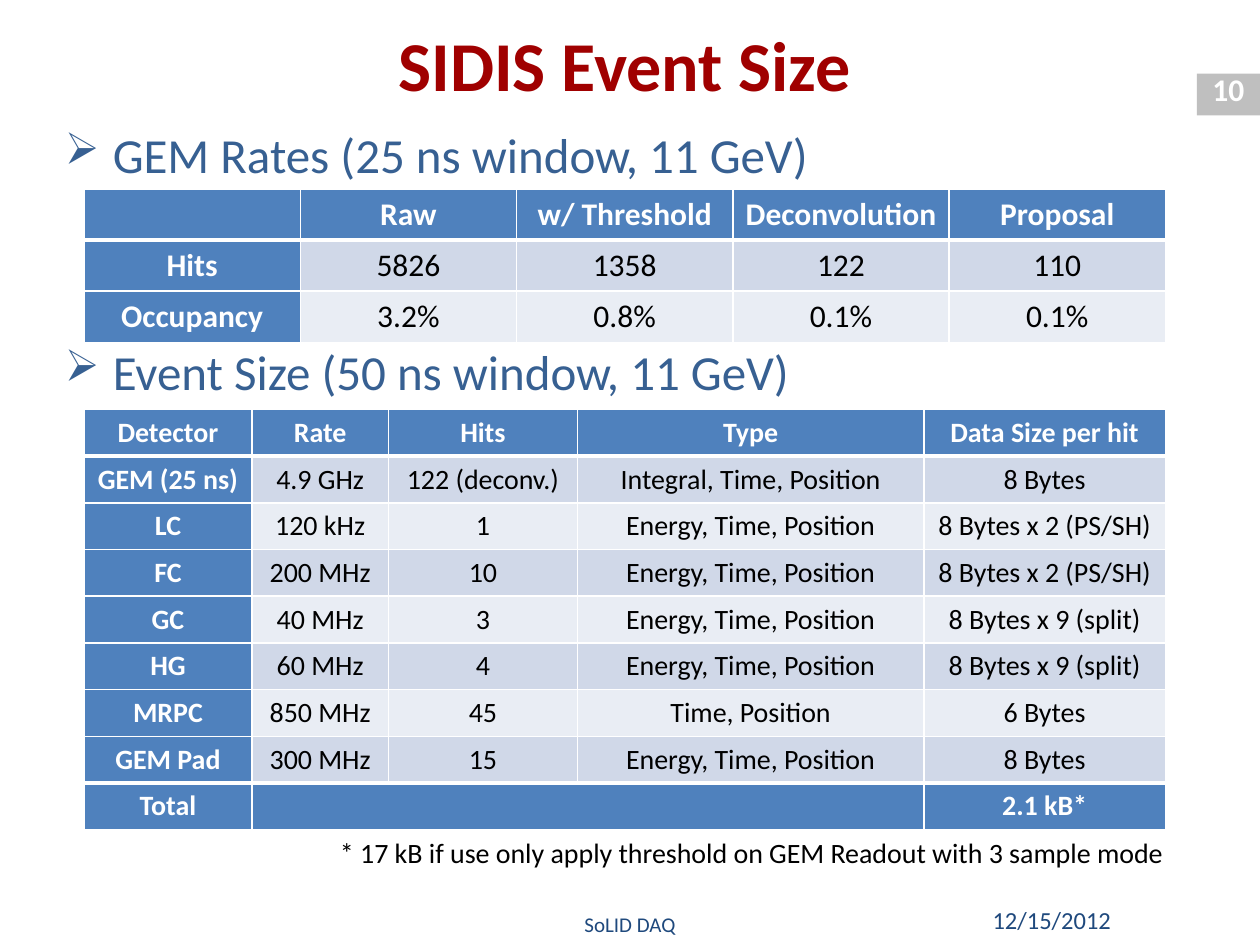
from lxml.etree import SubElement
from pptx import Presentation
from pptx.dml.color import RGBColor
from pptx.enum.shapes import MSO_SHAPE
from pptx.enum.text import MSO_ANCHOR, PP_ALIGN
from pptx.oxml.ns import qn
from pptx.util import Inches, Pt

COLUMNS, ROWS = 120, 90
WHITE, BLACK, NAVY, HEADING = "FFFFFF", "000000", "1F497D", "376092"
HEADER, BANDS = "4F81BD", ("D0D8E8", "E9EDF4")

GEM_RATES = [
    ["", "Raw", "w/ Threshold", "Deconvolution", "Proposal"],
    ["Hits", "5826", "1358", "122", "110"],
    ["Occupancy", "3.2%", "0.8%", "0.1%", "0.1%"],
]
ENERGY = "Energy, Time, Position"
EVENT_SIZE = [
    ["Detector", "Rate", "Hits", "Type", "Data Size per hit"],
    ["GEM (25 ns)", "4.9 GHz", "122 (deconv.)", "Integral, Time, Position", "8 Bytes"],
    ["LC", "120 kHz", "1", ENERGY, "8 Bytes x 2 (PS/SH)"],
    ["FC", "200 MHz", "10", ENERGY, "8 Bytes x 2 (PS/SH)"],
    ["GC", "40 MHz", "3", ENERGY, "8 Bytes x 9 (split)"],
    ["HG", "60 MHz", "4", ENERGY, "8 Bytes x 9 (split)"],
    ["MRPC", "850 MHz", "45", "Time, Position", "6 Bytes"],
    ["GEM Pad", "300 MHz", "15", ENERGY, "8 Bytes"],
    ["Total", "", "", "", "2.1 kB*"],
]


def color(value):
    return RGBColor.from_string(value)


class SlideBuilder:
    """Places elements on a grid of 120 columns by 90 rows."""

    font = "Calibri"

    def __init__(self, deck):
        self.page = deck.slides.add_slide(deck.slide_layouts[6])
        self.unit_x = deck.slide_width / COLUMNS
        self.unit_y = deck.slide_height / ROWS

    def place(self, left, top, width, height):
        return (round(left * self.unit_x), round(top * self.unit_y),
                round(width * self.unit_x), round(height * self.unit_y))

    def span(self, para, text, size, tint, bold=False):
        span = para.add_run()
        span.text = text
        span.font.name, span.font.size, span.font.bold = self.font, Pt(size), bold
        span.font.color.rgb = color(tint)

    def rectangle(self, area, tint):
        box = self.page.shapes.add_shape(MSO_SHAPE.RECTANGLE, *self.place(*area))
        box.shadow.inherit = False
        box.fill.solid()
        box.fill.fore_color.rgb = color(tint)
        box.line.fill.background()

    def frame(self, area, anchor, wrap=True):
        box = self.page.shapes.add_textbox(*self.place(*area))
        frame = box.text_frame
        frame.word_wrap, frame.vertical_anchor = wrap, anchor
        return frame

    def text(self, area, text, size, tint, align=PP_ALIGN.CENTER, bold=False,
             anchor=MSO_ANCHOR.MIDDLE, wrap=True):
        para = self.frame(area, anchor, wrap).paragraphs[0]
        para.alignment = align
        self.span(para, text, size, tint, bold)

    def bullets(self, area, lines, gap):
        frame = self.frame(area, MSO_ANCHOR.TOP)
        for index, line in enumerate(lines):
            para = frame.add_paragraph() if index else frame.paragraphs[0]
            if index:
                para.space_before = Pt(gap)
            properties = para._p.get_or_add_pPr()
            properties.set("marL", str(Inches(0.38)))
            properties.set("indent", str(Inches(-0.38)))
            SubElement(properties, qn("a:buSzPct"), val="90000")
            SubElement(properties, qn("a:buChar"), char="➢")
            self.span(para, line, 28, HEADING)

    def borders(self, cell, top, bottom):
        """Draw white cell edges; top and bottom are widths in points."""
        properties = cell._tc.get_or_add_tcPr()
        for side, width in zip("LRTB", (1, 1, top, bottom)):
            line = SubElement(properties, qn(f"a:ln{side}"), w=str(Pt(width)))
            fill = SubElement(line, qn("a:solidFill"))
            SubElement(fill, qn("a:srgbClr"), val=WHITE)

    def table(self, left, top, widths, row_height, data, size,
              anchor=MSO_ANCHOR.TOP, total=False):
        """Header row and column, banded body and, if total, a closing total row."""
        area = self.place(left, top, sum(widths), row_height * len(data))
        table = self.page.shapes.add_table(len(data), len(widths), *area).table
        for column, width in zip(table.columns, widths):
            column.width = round(width * self.unit_x)
        last = len(data) - 1 if total else None
        for r, values in enumerate(data):
            table.rows[r].height = round(row_height * self.unit_y)
            for c, value in enumerate(values):
                cell = table.cell(r, c)
                strong = c == 0 or r in (0, last)
                self.borders(cell, 3 if r in (1, last) else 1,
                             3 if r == 0 or r + 1 == last else 1)
                cell.fill.solid()
                cell.fill.fore_color.rgb = color(HEADER if strong else BANDS[(r - 1) % 2])
                cell.vertical_anchor = anchor
                para = cell.text_frame.paragraphs[0]
                para.alignment = PP_ALIGN.CENTER
                if value:
                    self.span(para, value, size, WHITE if strong else BLACK, strong)
                else:
                    SubElement(para._p, qn("a:endParaRPr"), sz=str(size * 100))
        if total:
            table.cell(last, 1).merge(table.cell(last, len(widths) - 2))


def main():
    deck = Presentation()
    deck.slide_width, deck.slide_height = Inches(10), Inches(7.5)
    slide = SlideBuilder(deck)

    slide.rectangle((114, 7, 6, 4), "BFBFBF")
    slide.text((114, 6.1, 6, 4.8), "10", 18, WHITE, bold=True, anchor=MSO_ANCHOR.TOP)
    slide.text((5, 1, 109, 10), "SIDIS Event Size", 40, "A00000", bold=True)
    slide.bullets((5, 11.3, 110, 73), ["GEM Rates (25 ns window, 11 GeV)",
                                       "Event Size (50 ns window, 11 GeV)"], gap=90)
    slide.text((91, 85.2, 16, 4.8), "12/15/2012", 14, NAVY, PP_ALIGN.RIGHT)
    slide.text((29, 86, 62, 4), "SoLID DAQ", 12, NAVY)
    slide.table(8, 18, [103 / 5] * 5, 4.87, GEM_RATES, 18, MSO_ANCHOR.MIDDLE)
    slide.table(8, 39, [16, 13, 18, 33, 23], 4.45, EVENT_SIZE, 16, total=True)
    slide.text((31.2, 79, 81.8, 4.4),
               "* 17 kB if use only apply threshold on GEM Readout with 3 sample mode",
               16, BLACK, PP_ALIGN.LEFT, anchor=MSO_ANCHOR.TOP, wrap=False)
    deck.save("out.pptx")


if __name__ == "__main__":
    main()
